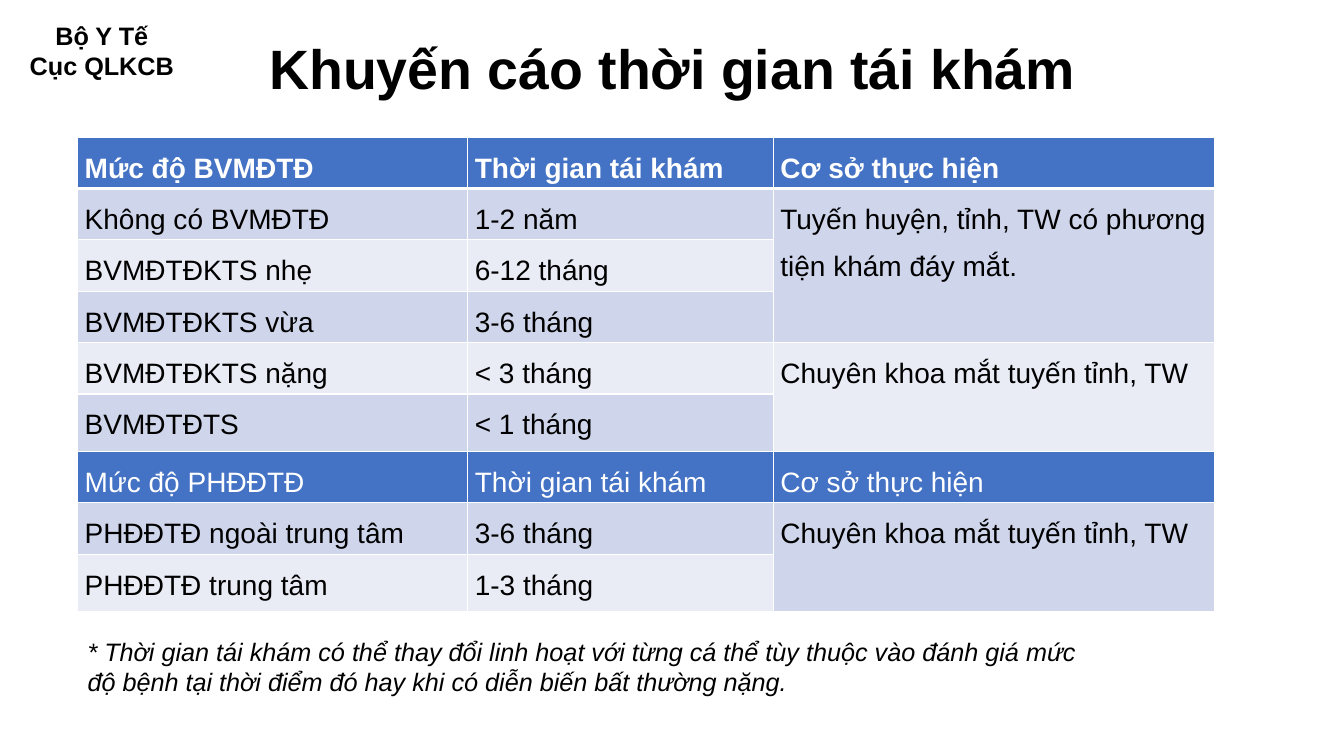
from lxml import etree
from pptx import Presentation
from pptx import util as u
from pptx.dml.color import RGBColor
from pptx.enum import text
from pptx.oxml import ns

PX = 9144
FONT = "Arial"
BLACK = RGBColor(0x00, 0x00, 0x00)
WHITE = RGBColor(0xFF, 0xFF, 0xFF)
BLUE = RGBColor(0x44, 0x72, 0xC4)
BAND_DARK = RGBColor(0xCF, 0xD5, 0xEA)
BAND_LIGHT = RGBColor(0xE9, 0xEB, 0xF5)

COLUMN_WIDTHS = [387, 303, 438]
ROW_HEIGHTS = [51, 51, 51, 51, 51, 57, 51, 51, 57]
HEADING_ROWS = (0, 6)
FACILITY_MERGES = [(1, 3), (4, 5), (7, 8)]
SCHEDULE = [
    ("Mức độ BVMĐTĐ", "Thời gian tái khám", "Cơ sở thực hiện"),
    ("Không có BVMĐTĐ", "1-2 năm", "Tuyến huyện, tỉnh, TW có phương tiện khám đáy mắt."),
    ("BVMĐTĐKTS nhẹ", "6-12 tháng", ""),
    ("BVMĐTĐKTS vừa", "3-6 tháng", ""),
    ("BVMĐTĐKTS nặng", "< 3 tháng", "Chuyên khoa mắt tuyến tỉnh, TW"),
    ("BVMĐTĐTS", "< 1 tháng", ""),
    ("Mức độ PHĐĐTĐ", "Thời gian tái khám", "Cơ sở thực hiện"),
    ("PHĐĐTĐ ngoài trung tâm", "3-6 tháng", "Chuyên khoa mắt tuyến tỉnh, TW"),
    ("PHĐĐTĐ trung tâm", "1-3 tháng", ""),
]


def px(*lengths):
    return [length * PX for length in lengths]


def style_runs(para, size, color=BLACK, bold=False, italic=False):
    for span in para.runs:
        font = span.font
        font.name, font.size, font.color.rgb = FONT, u.Pt(size), color
        font.bold, font.italic = bold, italic


def add_title(page, box):
    title = page.shapes.title
    title.left, title.top, title.width, title.height = px(*box)
    frame = title.text_frame
    frame.text = "Khuyến cáo thời gian tái khám"
    frame.word_wrap = True
    frame.auto_size = text.MSO_AUTO_SIZE.NONE
    frame.vertical_anchor = text.MSO_ANCHOR.MIDDLE
    para = frame.paragraphs[0]
    para.alignment = text.PP_ALIGN.CENTER
    para.line_spacing = 0.9
    style_runs(para, 39.6, bold=True)


def add_text(page, box, lines, alignment, bold=False, italic=False):
    frame = page.shapes.add_textbox(*px(*box)).text_frame
    frame.word_wrap = True
    frame.auto_size = text.MSO_AUTO_SIZE.SHAPE_TO_FIT_TEXT
    frame.text = "\n".join(lines)
    for para in frame.paragraphs:
        para.alignment = alignment
        style_runs(para, 18, bold=bold, italic=italic)


def set_borders(cell, widths):
    properties = cell._tc.get_or_add_tcPr()
    for index, (side, width) in enumerate(widths.items()):
        line = etree.Element(ns.qn(f"a:ln{side}"), w=str(u.Pt(width)))
        fill = etree.SubElement(line, ns.qn("a:solidFill"))
        etree.SubElement(fill, ns.qn("a:srgbClr"), val=str(WHITE))
        properties.insert(index, line)


def style_cell(cell, row):
    heading = row in HEADING_ROWS
    cell.margin_left, cell.margin_right, cell.margin_top, cell.margin_bottom = px(7, 7, 0, 0)
    cell.fill.solid()
    band = BAND_DARK if row % 2 else BAND_LIGHT
    cell.fill.fore_color.rgb = BLUE if heading else band
    para = cell.text_frame.paragraphs[0]
    para.line_spacing = 1.5
    para.space_after = u.Pt(8)
    style_runs(para, 20, WHITE if heading else BLACK, bold=row == 0)
    set_borders(cell, {"L": 1, "R": 1, "T": 3 if row == 1 else 1, "B": 3 if row == 0 else 1})


def add_schedule(page, box):
    table = page.shapes.add_table(len(SCHEDULE), len(COLUMN_WIDTHS), *px(*box)).table
    for column, width in zip(table.columns, px(*COLUMN_WIDTHS)):
        column.width = width
    for row, height in zip(table.rows, px(*ROW_HEIGHTS)):
        row.height = height
    for row, entries in enumerate(SCHEDULE):
        for column, entry in enumerate(entries):
            cell = table.cell(row, column)
            cell.text = entry
            style_cell(cell, row)
    for first, last in FACILITY_MERGES:
        table.cell(first, 2).merge(table.cell(last, 2))


def main():
    deck = Presentation()
    deck.slide_width, deck.slide_height = px(1333, 750)
    page = deck.slides.add_slide(deck.slide_layouts[5])
    add_title(page, (92, 40, 1150, 61))
    add_schedule(page, (77, 136, sum(COLUMN_WIDTHS), sum(ROW_HEIGHTS)))
    note = ("* Thời gian tái khám có thể thay đổi linh hoạt với từng cá thể tùy thuộc vào "
            "đánh giá mức độ bệnh tại thời điểm đó hay khi có diễn biến bất thường nặng.")
    add_text(page, (77, 626, 1011, 101), [note], text.PP_ALIGN.LEFT, italic=True)
    add_text(page, (0, 15, 202, 71), ["Bộ Y Tế", "Cục QLKCB"], text.PP_ALIGN.CENTER, bold=True)
    deck.save("out.pptx")


if __name__ == "__main__":
    main()
